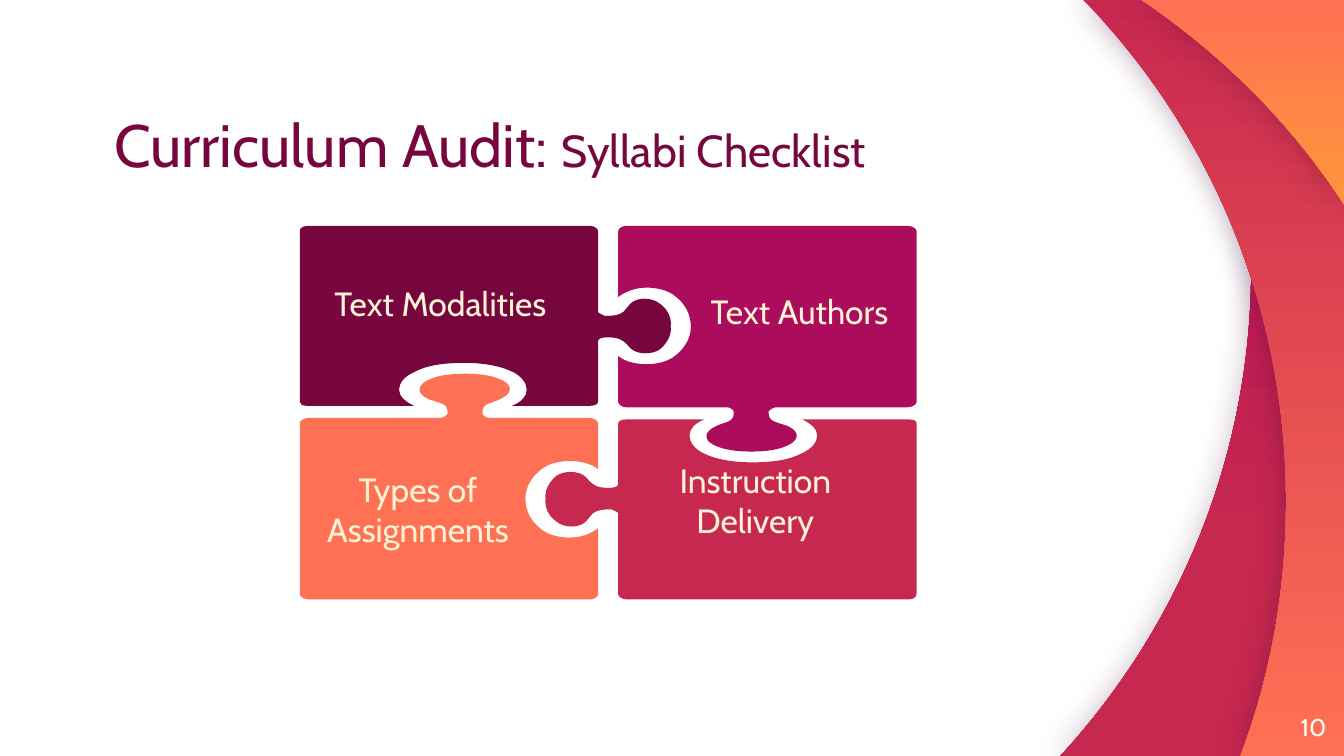
from lxml.etree import SubElement
from pptx import Presentation
from pptx.dml.color import RGBColor
from pptx.enum.text import MSO_ANCHOR, MSO_AUTO_SIZE, PP_ALIGN
from pptx.oxml.ns import qn
from pptx.util import Pt

PLUM = RGBColor(0x77, 0x06, 0x3F)
MAGENTA = RGBColor(0xAC, 0x0C, 0x5C)
CRIMSON = RGBColor(0xC7, 0x28, 0x4F)
CORAL = RGBColor(0xFF, 0x71, 0x54)
ORANGE = RGBColor(0xFF, 0x96, 0x3C)
CREAM = RGBColor(0xFE, 0xF3, 0xD5)
WHITE = RGBColor(0xFF, 0xFF, 0xFF)
SHADOW = RGBColor(0x41, 0x04, 0x33)

W, H = 720, 405
CENTRE = (325.8, 221.05)  # the puzzle looks the same after a half turn here

# Outlines in points: a pair is a corner, six numbers are a Bézier curve.
TOP_LEFT = [
    (221.8, 217.4),
    (217.4, 215.3, 213.8, 212.4, 213.8, 208.8),
    (213.8, 205.2, 216.7, 201.6, 221.8, 199.4),
    (228.2, 195.8, 237.6, 194.4, 248.4, 194.4),
    (258.5, 194.4, 267.8, 195.8, 275, 199.4),
    (279.4, 201.6, 282.2, 205.2, 282.2, 208.8),
    (282.2, 212.4, 279.4, 215.3, 274.3, 217.4),
    (316.1, 217.4),
    (318.2, 217.4, 320.4, 216.7, 320.4, 215.3),
    (320.4, 182.9),
    (320.4, 181.4, 322.6, 180.7, 324, 180.7),
    (328.3, 180.7, 331.2, 180.7, 334.1, 182.9),
    (335.5, 183.6, 336.2, 185, 337.7, 186.5),
    (341.3, 190.1, 349.2, 190.1, 353.5, 187.2),
    (357.8, 183.6, 360, 178.6, 359.3, 175),
    (360, 170.6, 357.8, 165.6, 353.5, 162.7),
    (349.2, 159.1, 341.3, 159.1, 337.7, 162.7),
    (336.2, 164.2, 335.5, 165.6, 334.1, 167),
    (331.2, 169.2, 328.3, 169.2, 324, 169.2),
    (322.6, 168.5, 320.4, 167.8, 320.4, 167),
    (320.4, 123.8),
    (320.4, 122.4, 318.2, 121, 316.1, 121),
    (164.9, 121),
    (162, 121, 160.6, 122.4, 160.6, 123.8),
    (160.6, 215.3),
    (160.6, 216.7, 162, 217.4, 164.9, 217.4),
]
TOP_RIGHT = [
    (331.2, 159.1),
    (334.8, 156.2, 340.6, 154.1, 346.3, 154.1),
    (352.1, 154.1, 357.8, 155.5, 361.4, 158.4),
    (367.2, 162.7, 370.1, 168.5, 370.1, 175),
    (370.1, 180.7, 367.2, 186.5, 361.4, 190.8),
    (357.8, 193.7, 352.1, 195.1, 346.3, 195.1),
    (340.6, 195.1, 334.8, 193.7, 331.2, 190.8),
    (331.2, 215.3),
    (331.2, 216.7, 333.4, 218.2, 335.5, 218.2),
    (389.5, 218.2),
    (391, 218.2, 393.1, 219.6, 393.1, 220.3),
    (393.1, 223.2, 393.1, 224.6, 389.5, 226.1),
    (387.4, 226.8, 385.2, 227.5, 383.8, 228.2),
    (377.3, 231.1, 376.6, 235.4, 382.3, 238.3),
    (388.1, 241.2, 395.3, 241.9, 402.5, 241.9),
    (409.7, 241.9, 416.9, 241.2, 422.6, 238.3),
    (428.4, 235.4, 428.4, 231.1, 421.9, 228.2),
    (419.8, 227.5, 417.6, 226.8, 415.4, 226.1),
    (411.8, 224.6, 411.8, 223.2, 411.8, 220.3),
    (412.6, 219.6, 414, 218.2, 415.4, 218.2),
    (486, 218.2),
    (488.9, 218.2, 491, 216.7, 491, 215.3),
    (491, 123.8),
    (491, 122.4, 488.9, 121, 486, 121),
    (335.5, 121),
    (333.4, 121, 331.2, 122.4, 331.2, 123.8),
]

# Outline, two gradient stops (colour, position), shadow opacity in percent
BANDS = [
    ([(642.2, 0), (661, 46.1, 670.3, 94.3, 670.3, 144),
      (670.3, 244.8, 631.4, 336.2, 568.1, H), (W, H), (W, 0)],
     [(MAGENTA, 0), (CRIMSON, 0.72)], 25),
    ([(580.3, 0), (648, 69.1, 689, 164.2, 689, 268.6),
      (689, 315.4, 681.1, 361.4, 664.6, H), (W, H), (W, 0)],
     [(CRIMSON, 0), (CORAL, 1)], 35),
    ([(611.3, 0), (654.5, 28.8, 691.9, 66.2, W, 109.4), (W, 0)],
     [(CORAL, 0), (ORANGE, 1)], 30),
]
PIECES = [(TOP_LEFT, PLUM, False), (TOP_RIGHT, MAGENTA, False),
          (TOP_RIGHT, CORAL, True), (TOP_LEFT, CRIMSON, True)]
LABELS = [
    ("Text Authors", (373.7, 152.6, 126.7, 28.8), PP_ALIGN.LEFT),
    ("Text Modalities", (172.1, 148.3, 149.8, 28.8), PP_ALIGN.LEFT),
    ("Types of Assignments", (160.6, 247.7, 126.7, 51.1), PP_ALIGN.CENTER),
    ("Instruction Delivery", (341.3, 242.6, 126.7, 51.1), PP_ALIGN.CENTER),
]


def half_turn(outline):
    return [tuple(2 * CENTRE[i % 2] - v for i, v in enumerate(seg)) for seg in outline]


class Deck:
    font = "Cabin"

    def __init__(self):
        self.prs = Presentation()
        self.prs.slide_width, self.prs.slide_height = Pt(W), Pt(H)
        self.s = self.prs.slides.add_slide(self.prs.slide_layouts[5])

    def shape(self, outline):
        """Draw a closed outline, then bend the segments that are curves."""
        start, *rest = [tuple(map(Pt, seg)) for seg in outline]
        builder = self.s.shapes.build_freeform(*start)
        builder.add_line_segments([seg[-2:] for seg in rest], close=True)
        sp = builder.convert_to_shape()
        for seg, line in zip(rest, list(sp._element.iter(qn("a:lnTo")))):
            if len(seg) == 6:
                line.tag = qn("a:cubicBezTo")
                line.remove(line[0])
                for x, y in zip(seg[::2], seg[1::2]):
                    SubElement(line, qn("a:pt"), x=str(x - sp.left), y=str(y - sp.top))
        sp.line.fill.background()
        sp.shadow.inherit = False
        return sp

    def piece(self, outline, color):
        sp = self.shape(outline)
        sp.fill.solid()
        sp.fill.fore_color.rgb = color

    def band(self, outline, stops, opacity):
        sp = self.shape(outline)
        sp.fill.gradient()
        sp.fill.gradient_angle = 270
        for stop, (color, position) in zip(sp.fill.gradient_stops, stops):
            stop.color.rgb = color
            stop.position = position
        effects = sp._element.spPr.find(qn("a:effectLst"))
        shadow = SubElement(effects, qn("a:outerShdw"), blurRad=str(Pt(16.9)),
                            dist="0", dir="0", algn="ctr", rotWithShape="0")
        clr = SubElement(shadow, qn("a:srgbClr"), val=str(SHADOW))
        SubElement(clr, qn("a:alpha"), val=str(opacity * 1000))

    def run(self, p, text, size, color):
        r = p.add_run()
        r.text = text
        r.font.name, r.font.size = self.font, Pt(size)
        r.font.color.rgb = color

    def frame(self, sp, box, anchor, inset=True):
        """Place a text shape and return its text frame."""
        sp.left, sp.top, sp.width, sp.height = map(Pt, box)
        tf = sp.text_frame
        tf.word_wrap = True
        tf.vertical_anchor = anchor
        tf.auto_size = MSO_AUTO_SIZE.SHAPE_TO_FIT_TEXT if inset else MSO_AUTO_SIZE.NONE
        if not inset:
            tf.margin_left = tf.margin_top = tf.margin_right = tf.margin_bottom = 0
        return tf

    def title(self, box, parts):
        tf = self.frame(self.s.shapes.title, box, MSO_ANCHOR.BOTTOM, inset=False)
        p = tf.paragraphs[0]
        p.alignment, p.line_spacing = PP_ALIGN.LEFT, 0.9
        for text, size in parts:
            self.run(p, text, size, PLUM)

    def text(self, text, box, align, size=18, color=CREAM, anchor=MSO_ANCHOR.TOP, inset=True):
        sp = self.s.shapes.add_textbox(*map(Pt, box))
        p = self.frame(sp, box, anchor, inset).paragraphs[0]
        p.alignment = align
        self.run(p, text, size, color)


def main():
    deck = Deck()
    for outline, stops, opacity in BANDS:
        deck.band(outline, stops, opacity)
    deck.title((61.2, 65.5, 547.9, 31), [("Curriculum Audit: ", 32), ("Syllabi Checklist", 24)])
    deck.text("10", (667.4, 373.7, 43.2, 31), PP_ALIGN.RIGHT, size=13, color=WHITE,
              anchor=MSO_ANCHOR.MIDDLE, inset=False)
    for outline, color, turned in PIECES:
        deck.piece(half_turn(outline) if turned else outline, color)
    for text, box, align in LABELS:
        deck.text(text, box, align)
    deck.prs.save("out.pptx")


if __name__ == "__main__":
    main()
